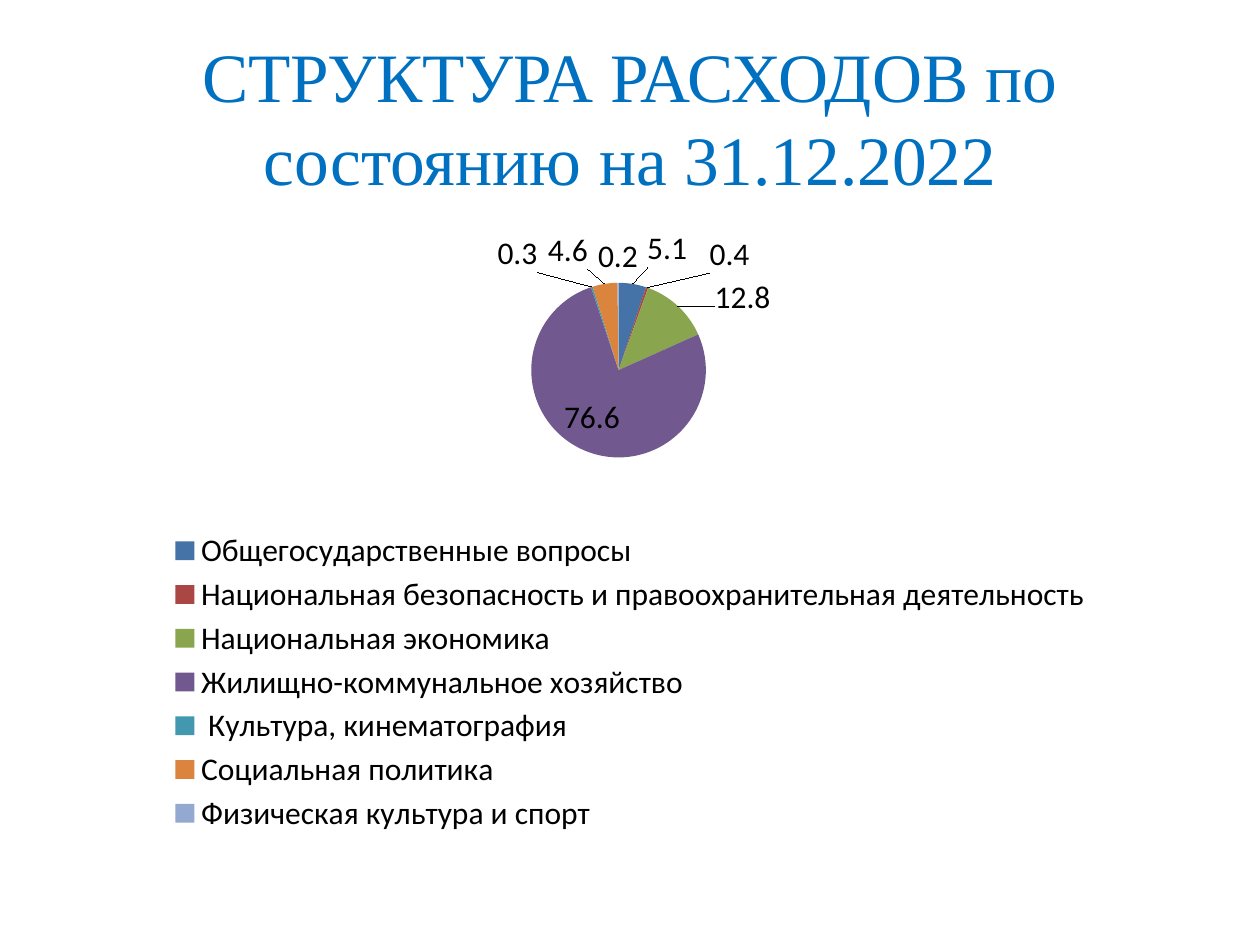
from pptx import Presentation
from pptx.chart.data import CategoryChartData
from pptx.dml.color import RGBColor
from pptx.enum import chart as kinds, text
from pptx.oxml import parse_xml
from pptx.oxml.ns import nsdecls
from pptx.util import Inches, Pt


def color(value):
    return RGBColor.from_string(value)


def manual_layout(**values):
    fields = "".join(f'<c:{key} val="{value}"/>' for key, value in values.items())
    return parse_xml(
        f'<c:layout {nsdecls("c")}><c:manualLayout>{fields}</c:manualLayout></c:layout>'
    )


deck = Presentation()
deck.slide_width, deck.slide_height = Inches(10), Inches(7.5)
page = deck.slides.add_slide(deck.slide_layouts[6])

title = page.shapes.add_textbox(Inches(0.5), Inches(0.3), Inches(9), Inches(1.25))
frame = title.text_frame
frame.word_wrap = True
frame.vertical_anchor = text.MSO_ANCHOR.MIDDLE
frame.text = "СТРУКТУРА РАСХОДОВ по состоянию на 31.12.2022"
para = frame.paragraphs[0]
para.alignment = text.PP_ALIGN.CENTER
span = para.runs[0]
span.font.name = "Times New Roman"
span.font.size = Pt(39.6)
span.font.color.rgb = color("0070C0")

OUTSIDE = kinds.XL_LABEL_POSITION.OUTSIDE_END
CENTER = kinds.XL_LABEL_POSITION.CENTER
expenses = [
    ("Общегосударственные вопросы", 5.1, "4572A7", OUTSIDE, 0.11, -0.07),
    ("Национальная безопасность и правоохранительная деятельность", 0.4, "AA4643", OUTSIDE, 0.48, -0.06),
    ("Национальная экономика", 12.8, "89A54E", OUTSIDE, 0.25, 0.13),
    ("Жилищно-коммунальное хозяйство", 76.6, "71588F", CENTER, -0.07, 0.06),
    (" Культура, кинематография", 0.3, "4198AF", OUTSIDE, -0.41, -0.06),
    ("Социальная политика", 4.6, "DB843D", OUTSIDE, -0.13, -0.06),
    ("Физическая культура и спорт", 0.2, "93A9CF", OUTSIDE, 0, 0),
]
width, height = 9, 4.95
data = CategoryChartData()
data.categories = [row[0] for row in expenses]
data.add_series("Series 1", [row[1] for row in expenses])
chart = page.shapes.add_chart(
    kinds.XL_CHART_TYPE.PIE, Inches(0.5), Inches(1.75), Inches(width), Inches(height), data
).chart
chart.has_title = False
chart.font.name = "Calibri"
chart.font.size = Pt(18)
chart.font.color.rgb = color("000000")
chart.has_legend = True
chart.legend.position = kinds.XL_LEGEND_POSITION.BOTTOM
chart.legend.include_in_layout = False

plot = chart.plots[0]
plot.vary_by_categories = True
series = plot.series[0]
for index, (name, value, fill, position, right, down) in enumerate(expenses):
    point = series.points[index]
    point.format.fill.solid()
    point.format.fill.fore_color.rgb = color(fill)
    point.data_label.position = position
    if right or down:
        label = series.data_labels._element.xpath(f"c:dLbl[c:idx/@val='{index}']")[0]
        label.insert(1, manual_layout(x=round(right / width, 3), y=round(down / height, 3)))
series.data_labels.show_value = True

area = chart._chartSpace.xpath("c:chart/c:plotArea")[0]
for old in area.xpath("c:layout"):
    area.remove(old)
area.insert(0, manual_layout(
    layoutTarget="inner", xMode="edge", yMode="edge", x=0.41, y=0.1, w=0.16, h=0.28))
legend = chart.legend._element
for old in legend.xpath("c:layout"):
    legend.remove(old)
legend.xpath("c:legendPos")[0].addnext(manual_layout(
    xMode="edge", yMode="edge", x=0.09, y=0.49, w=0.82, h=0.5))

deck.save("out.pptx")
